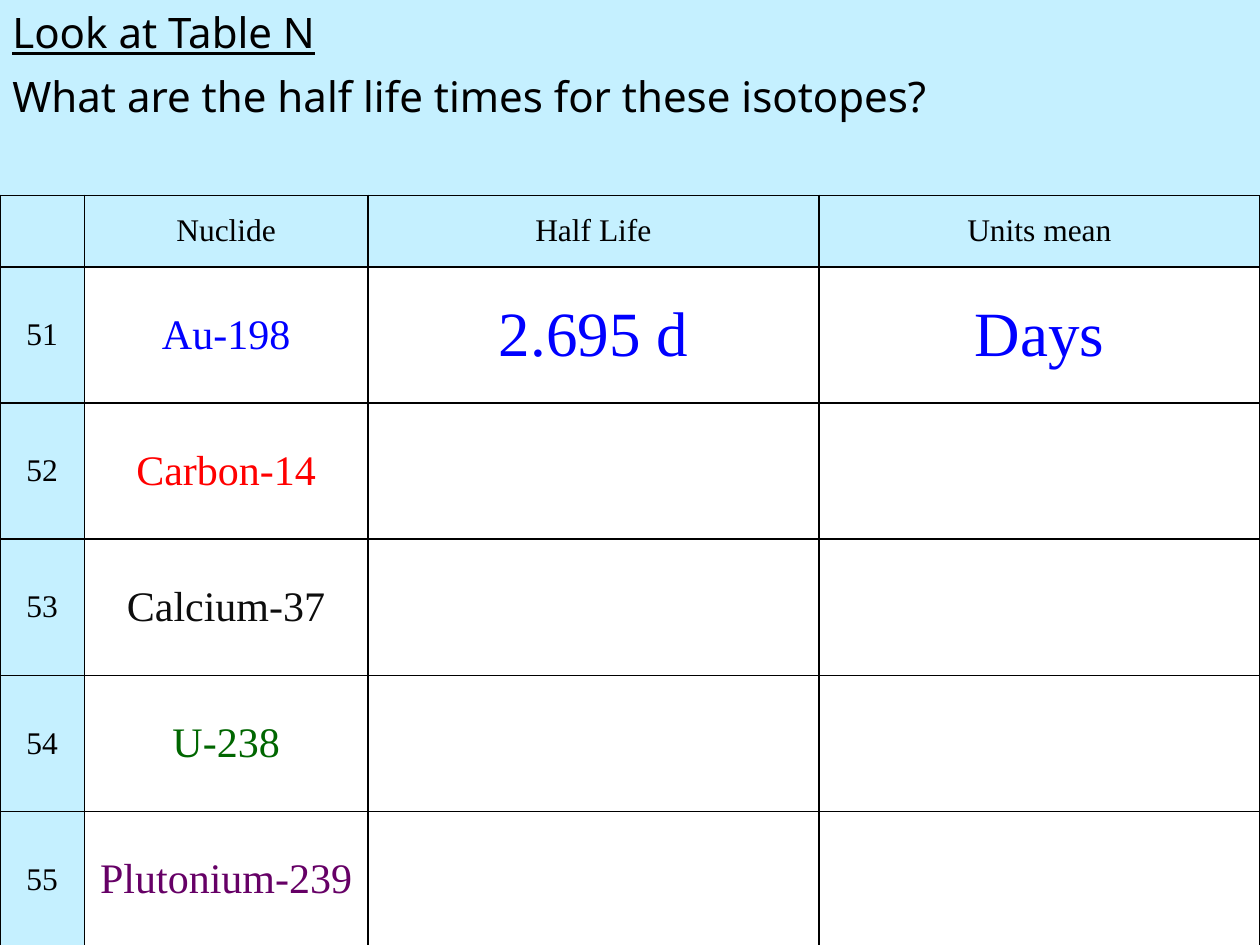
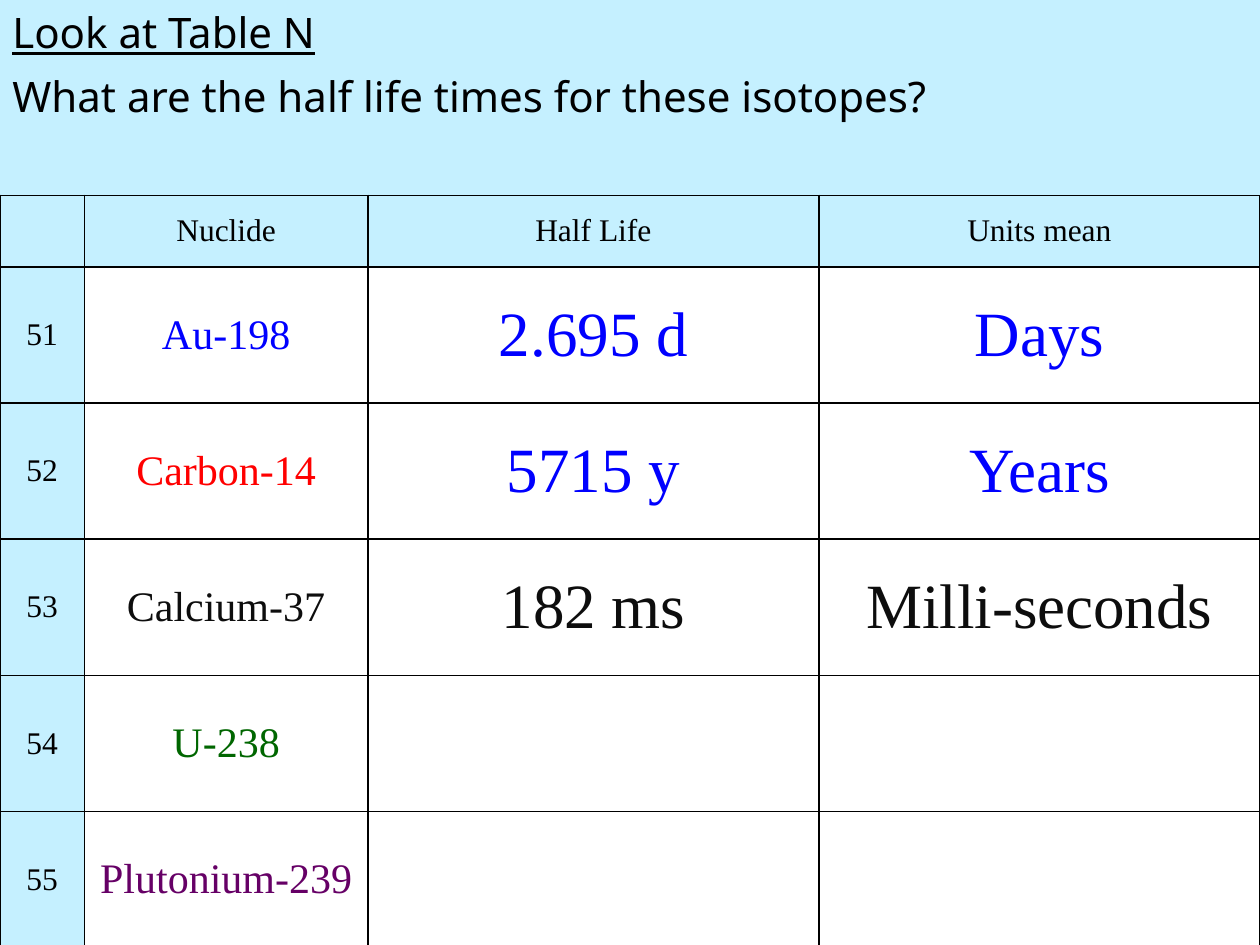
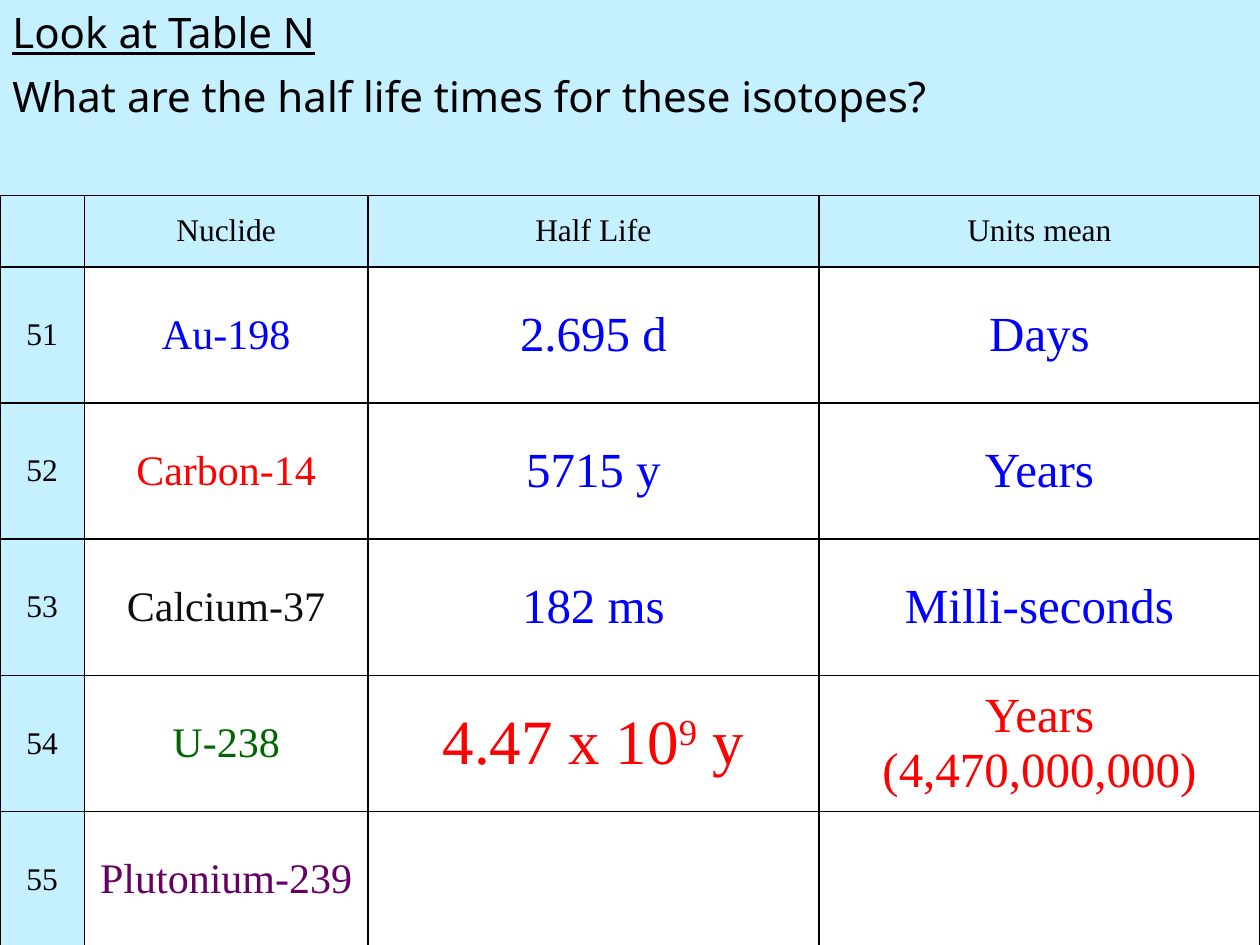
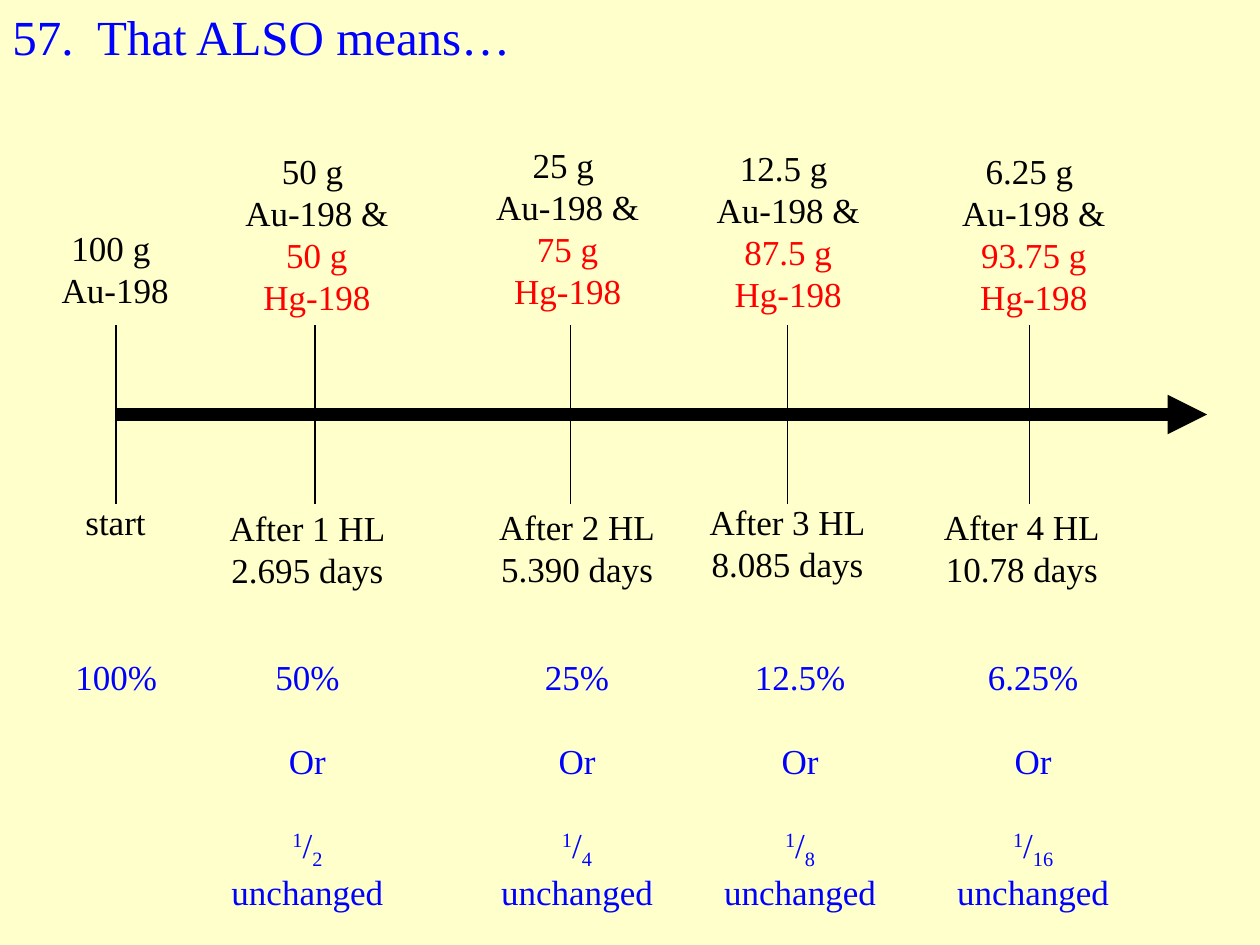
from dataclasses import dataclass

from lxml.etree import SubElement as Sub
from pptx import Presentation
from pptx.dml.color import RGBColor as RGB
from pptx.enum.shapes import MSO_CONNECTOR as Link
from pptx.enum.text import MSO_ANCHOR as Anchor
from pptx.enum.text import MSO_AUTO_SIZE as Fit
from pptx.enum.text import PP_ALIGN as Align
from pptx.oxml.ns import qn
from pptx.util import Inches, Pt


@dataclass(frozen=True)
class Theme:
    sky: str = "C5F0FF"
    cream: str = "FFFFCC"
    white: str = "FFFFFF"
    black: str = "000000"
    blue: str = "0000FF"
    red: str = "FF0000"
    coal: str = "0D0D0D"
    green: str = "006600"
    plum: str = "660066"
    sans: str = "Noto Sans"
    serif: str = "Times New Roman"
    small: int = 18
    note: int = 20
    body: int = 24
    head: int = 28
    big: int = 36


T = Theme()


def write(frame, paras, size, ink, font=T.serif, align=Align.CENTER, gap=0):
    for i, runs in enumerate(paras):
        para = frame.paragraphs[0] if i == 0 else frame.add_paragraph()
        para.alignment = align
        para.space_before = Pt(gap if i else 0)
        para.font.name = font
        para.font.size = Pt(size)
        para.font.bold = False
        para.font.color.rgb = RGB.from_string(ink)
        for part in [runs] if isinstance(runs, str) else runs:
            text, look = (part, {}) if isinstance(part, str) else part
            for j, line in enumerate(text.split("\n")):
                if j:
                    para.add_line_break()
                if not line:
                    continue
                run = para.add_run()
                run.text = line
                if "ink" in look:
                    run.font.color.rgb = RGB.from_string(look["ink"])
                if "base" in look:
                    run._r.get_or_add_rPr().set("baseline", str(look["base"] * 1000))
                if "line" in look:
                    run.font.underline = look["line"]


def draw(slide, x1, y1, x2, y2, width):
    line = slide.shapes.add_connector(
        Link.STRAIGHT, Inches(x1), Inches(y1), Inches(x2), Inches(y2))
    line.line.color.rgb = RGB.from_string(T.black)
    line.line.width = Pt(width)
    Sub(line._element.spPr, qn("a:effectLst"))
    return line


deck = Presentation()
deck.slide_width = Inches(10)
deck.slide_height = Inches(7.5)

slides = []
for back in [T.sky] * 3 + [T.cream]:
    slide = deck.slides.add_slide(deck.slide_layouts[6])
    slide.background.fill.solid()
    slide.background.fill.fore_color.rgb = RGB.from_string(back)
    slides.append(slide)
*quiz, last = slides

notes = []
heads = ["", "Nuclide", "Half Life", "Units mean"]
cols = [0.67, 2.25, 3.58, 3.5]
rows = [0.57] + [1.08] * 5
atoms = [("Au-198", T.blue), ("Carbon-14", T.red), ("Calcium-37", T.coal),
         ("U-238", T.green), ("Plutonium-239", T.plum)]
gold = ("2.695 d", "Days")
carbon = ("5715 y", "Years")
lime = ("182 ms", "Milli-seconds")
uran = (["4.47 x 10", ("9", {"base": 30}), " y"], "Years (4,470,000,000)")
keys = [
    [(gold, T.blue, T.big, T.big)],
    [(gold, T.blue, T.big, T.big), (carbon, T.blue, T.big, T.big),
     (lime, T.coal, T.big, T.big)],
    [(pair, T.blue, T.head, T.head) for pair in (gold, carbon, lime)]
    + [(uran, T.red, T.big, T.head)],
]

for slide, key in zip(quiz, keys):
    title = [[("Look at Table N", {"line": True})],
             "What are the half life times for these isotopes?"]
    notes.append((slide, (0, 0, 10, 1.11), title, T.body, T.black, T.sans, Align.LEFT, 8))

    grid = [[(head, T.small, T.black) for head in heads]]
    for i, (atom, ink) in enumerate(atoms):
        line = [(str(51 + i), T.small, T.black), (atom, T.body, ink)]
        if i < len(key):
            (half, unit), tone, size, less = key[i]
            line += [(half, size, tone), (unit, less, tone)]
        else:
            line += [("", T.small, T.black)] * 2
        grid.append(line)

    table = slide.shapes.add_table(
        len(rows), len(cols), 0, Inches(1.55), Inches(10), Inches(5.95)).table
    table.first_row = False
    table.horz_banding = False
    for col, width in zip(table.columns, cols):
        col.width = Inches(width)
    for row, high in zip(table.rows, rows):
        row.height = Inches(high)
    for r, line in enumerate(grid):
        for c, (text, size, ink) in enumerate(line):
            cell = table.cell(r, c)
            cell.vertical_anchor = Anchor.MIDDLE
            for side in "LRTB":
                edge = Sub(cell._tc.get_or_add_tcPr(), qn("a:ln" + side), w=str(Pt(1)))
                Sub(Sub(edge, qn("a:solidFill")), qn("a:srgbClr"), val=T.black)
            if r and c:
                cell.fill.solid()
                cell.fill.fore_color.rgb = RGB.from_string(T.white)
            else:
                cell.fill.background()
            write(cell.text_frame, [text], size, ink)

axis = draw(last, 0.92, 3.29, 9.58, 3.29, 7.5)
Sub(axis.line._get_or_add_ln(), qn("a:tailEnd"), type="triangle")
for x in [0.92, 2.5, 4.53, 6.25, 8.17]:
    draw(last, x, 2.58, x, 4, 0.75)

notes.append((last, (0, 0, 10, 0.57), ["57.  That ALSO means…"],
              T.head, T.blue, T.serif, Align.LEFT, 0))
for spot, text, ink, align in [
    ((0.08, 1.75, 1.67, 0.77), "100 g \nAu-198", T.black, Align.CENTER),
    ((0.58, 3.92, 0.83, 0.44), "start", T.black, Align.LEFT),
    ((0.5, 5.15, 1, 0.77), "100%", T.blue, Align.LEFT),
]:
    notes.append((last, spot, [text], T.note, ink, T.serif, align, 0))

steps = [
    ("50", "50", "2.695", (1.68, 1.14), (1.69, 3.97), 1.69),
    ("25", "75", "5.390", (3.67, 1.09), (3.83, 3.96), 3.83),
    ("12.5", "87.5", "8.085", (5.42, 1.11), (5.5, 3.92), 5.6),
    ("6.25", "93.75", "10.78", (7.37, 1.14), (7.36, 3.96), 7.45),
]
for n, (left, made, days, top, low, x) in enumerate(steps, 1):
    mass = [[f"{left} g \nAu-198 & ", (f"{made} g\nHg-198", {"ink": T.red})]]
    time = [f"After {n} HL", f"{days} days"]
    part = [("1", {"base": 30}), "/", (str(2 ** n), {"base": -25}), "\nunchanged"]
    share = [f"{left}%", "Or", part]
    for spot, paras, ink, gap in [
        ((*top, 1.67, 1.45), mass, T.black, 0),
        ((*low, 1.5, 0.77), time, T.black, 0),
        ((x, 5.15, 1.5, 2.12), share, T.blue, 24),
    ]:
        notes.append((last, spot, paras, T.note, ink, T.serif, Align.CENTER, gap))

for slide, spot, *text in notes:
    frame = slide.shapes.add_textbox(*map(Inches, spot)).text_frame
    frame.word_wrap = True
    frame.auto_size = Fit.SHAPE_TO_FIT_TEXT
    write(frame, *text)

deck.save("out.pptx")
